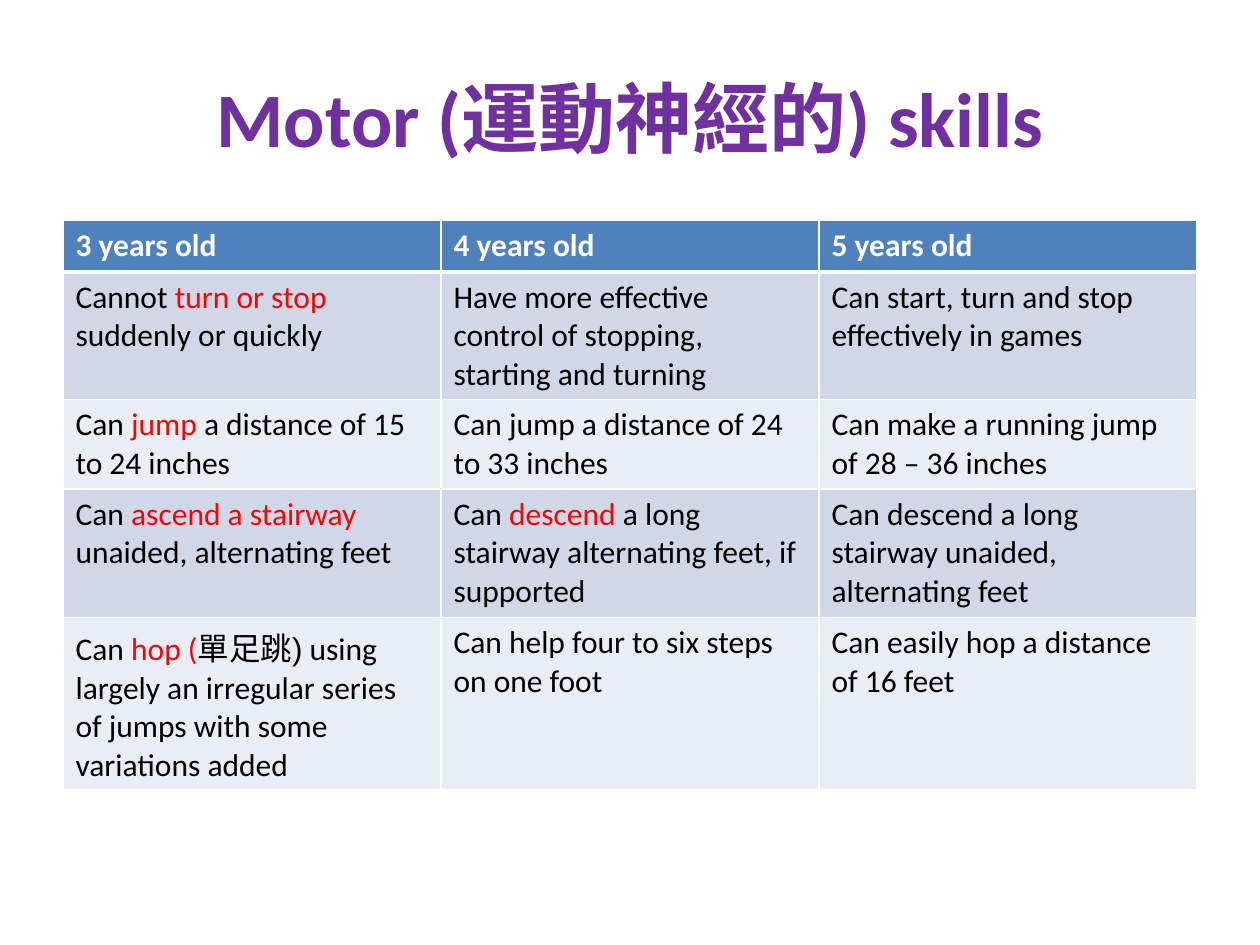
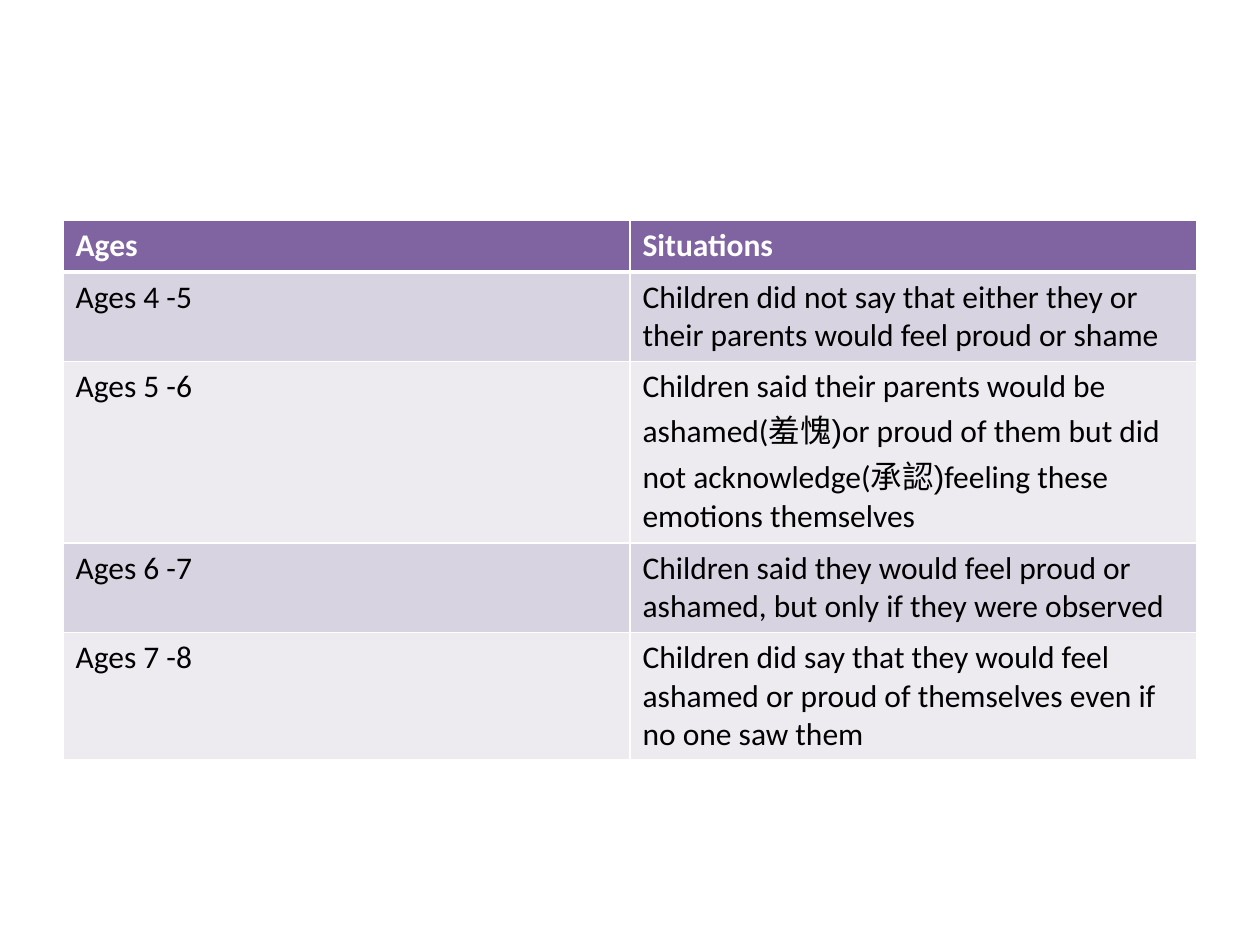
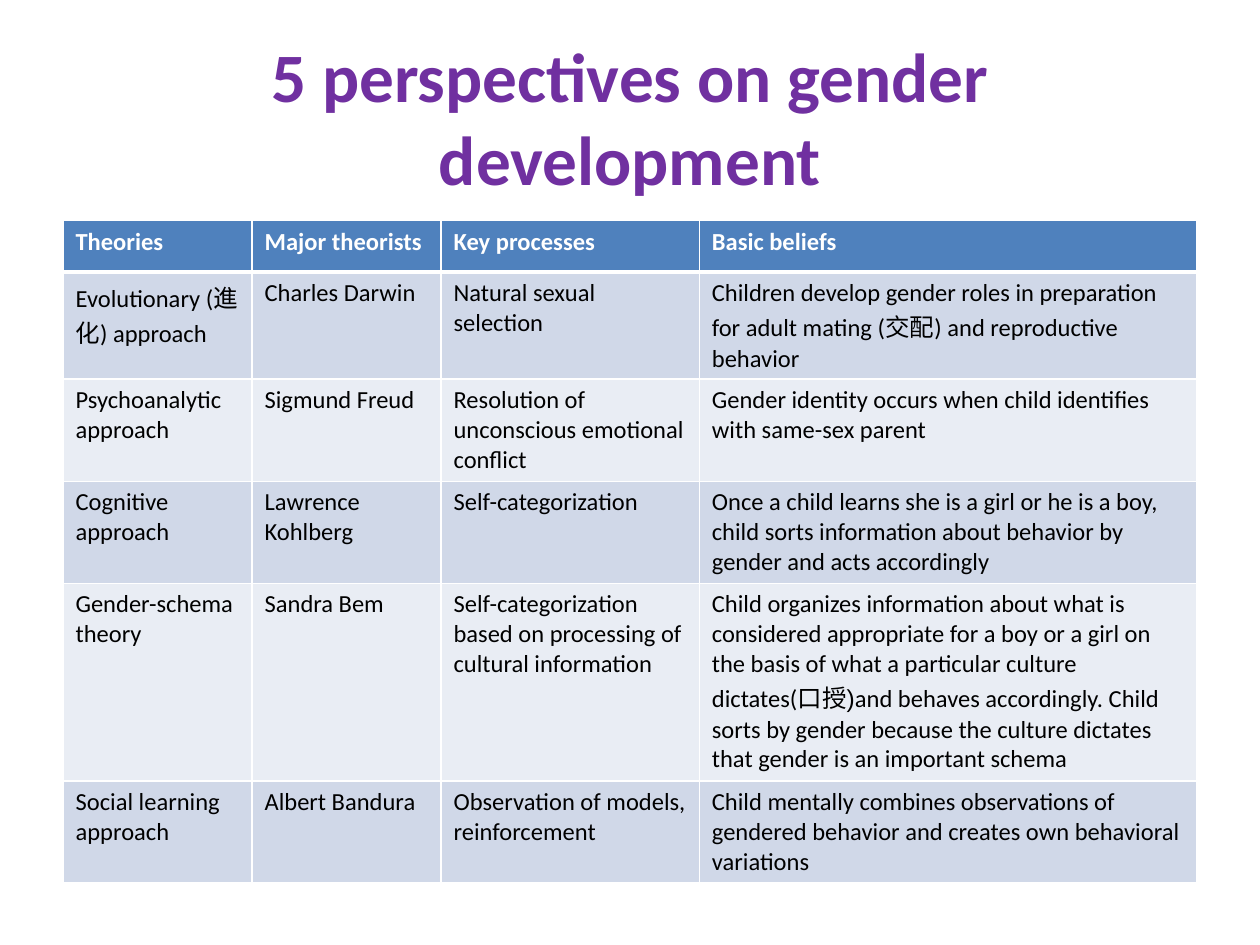
import lxml.etree
import pptx
import pptx.dml.color
import pptx.enum.text
import pptx.oxml.ns
import pptx.util

COLOURS = {
    "title": "7030A0",
    "header_text": "FFFFFF",
    "body_text": "000000",
    "highlight": "FF0000",
    "rule": "FFFFFF",
}
BLUE = {"header": "4F81BD", "bands": ("D0D8E8", "E9EDF4")}
PURPLE = {"header": "8064A2", "bands": ("D8D3E0", "EDEAF0")}

LATIN_FONT = "Calibri"
GLOSS_FONT = "Arial"
SLIDE_WIDTH = pptx.util.Inches(10)
SLIDE_HEIGHT = pptx.util.Inches(7.5)
MARGIN = int(SLIDE_WIDTH * 0.05)
CONTENT_WIDTH = SLIDE_WIDTH - 2 * MARGIN
TITLE_TOP = int(SLIDE_HEIGHT * 0.04)
TITLE_HEIGHT = pptx.util.Inches(1.25)
TABLE_TOP = pptx.util.Inches(1.75)
THIN_RULE = 1
HEADER_RULE = 3

MOTOR_SKILLS = [
    ["3 years old", "4 years old", "5 years old"],
    [
        ["Cannot ", ("turn or stop", "highlight"), " suddenly or quickly"],
        "Have more effective control of stopping, starting and turning",
        "Can start, turn and stop effectively in games",
    ],
    [
        ["Can ", ("jump", "highlight"), " a distance of 15 to 24 inches"],
        "Can jump a distance of 24 to 33 inches",
        "Can make a running jump of 28 – 36 inches",
    ],
    [
        ["Can ", ("ascend a stairway", "highlight"), " unaided, alternating feet"],
        ["Can ", ("descend", "highlight"), " a long stairway alternating feet, if supported"],
        "Can descend a long stairway unaided, alternating feet",
    ],
    [
        ["Can ", ("hop (", "highlight"), ("單足跳)", "gloss"),
         " using largely an irregular series of jumps with some variations added"],
        "Can help four to six steps on one foot",
        "Can easily hop a distance of 16 feet",
    ],
]
MOTOR_HEIGHTS = (0.41, 1.01, 0.71, 1.02, 1.37)

PRIDE_AND_SHAME = [
    ["Ages", "Situations"],
    ["Ages 4 -5",
     "Children did not say that either they or their parents would feel proud or shame"],
    ["Ages 5 -6",
     ["Children said their parents would be ashamed(", ("羞愧)", "gloss"),
      "or proud of them but did not acknowledge(", ("承認)", "gloss"),
      "feeling these emotions themselves"]],
    ["Ages 6 -7",
     "Children said they would feel proud or ashamed, but only if they were observed"],
    ["Ages 7 -8",
     "Children did say that they would feel ashamed or proud of themselves "
     "even if no one saw them"],
]
PRIDE_HEIGHTS = (0.41, 0.71, 1.44, 0.71, 1.01)

GENDER_THEORIES = [
    ["Theories", "Major theorists", "Key processes", "Basic beliefs"],
    ["Evolutionary (進化) approach", "Charles Darwin", "Natural sexual selection",
     "Children develop gender roles in preparation for adult mating (交配) "
     "and reproductive behavior"],
    ["Psychoanalytic approach", "Sigmund Freud",
     "Resolution of unconscious emotional conflict",
     "Gender identity occurs when child identifies with same-sex parent"],
    ["Cognitive approach", "Lawrence Kohlberg", "Self-categorization",
     "Once a child learns she is a girl or he is a boy, child sorts information "
     "about behavior by gender and acts accordingly"],
    ["Gender-schema theory", "Sandra Bem",
     "Self-categorization based on processing of cultural information",
     ["Child organizes information about what is considered appropriate for a boy "
      "or a girl on the basis of what a particular culture dictates(",
      ("口授)", "gloss"),
      "and behaves accordingly. Child sorts by gender because the culture dictates "
      "that gender is an important schema"]],
    ["Social learning approach", "Albert Bandura", "Observation of models, reinforcement",
     "Child mentally combines observations of gendered behavior and creates own "
     "behavioral variations"],
]
GENDER_HEIGHTS = (0.41, 0.85, 0.81, 0.81, 1.57, 0.81)


def rgb(hex_value):
    return pptx.dml.color.RGBColor.from_string(hex_value)


def set_font(font, size, colour, bold):
    font.name = LATIN_FONT
    font.size = pptx.util.Pt(size)
    font.bold = bold
    font.color.rgb = rgb(COLOURS[colour])


def add_title(slide, wording, size):
    title = slide.shapes.add_textbox(MARGIN, TITLE_TOP, CONTENT_WIDTH, TITLE_HEIGHT)
    frame = title.text_frame
    frame.word_wrap = True
    frame.vertical_anchor = pptx.enum.text.MSO_ANCHOR.MIDDLE
    heading = frame.paragraphs[0]
    heading.text = wording
    heading.alignment = pptx.enum.text.PP_ALIGN.CENTER
    set_font(heading.font, size, "title", True)


def add_rules(cell, top, bottom):
    qn = pptx.oxml.ns.qn
    properties = cell._tc.get_or_add_tcPr()
    widths = {"a:lnL": THIN_RULE, "a:lnR": THIN_RULE, "a:lnT": top, "a:lnB": bottom}
    for position, (side, width) in enumerate(widths.items()):
        rule = lxml.etree.Element(qn(side), w=str(pptx.util.Pt(width)))
        paint = lxml.etree.SubElement(rule, qn("a:solidFill"))
        lxml.etree.SubElement(paint, qn("a:srgbClr"), val=COLOURS["rule"])
        properties.insert(position, rule)


def write_cell(cell, content, fill, size, is_header):
    cell.fill.solid()
    cell.fill.fore_color.rgb = rgb(fill)
    paragraph = cell.text_frame.paragraphs[0]
    set_font(paragraph.font, size, "header_text" if is_header else "body_text", is_header)
    for part in [content] if isinstance(content, str) else content:
        wording, role = (part, None) if isinstance(part, str) else part
        run = paragraph.add_run()
        run.text = wording
        if role == "highlight":
            run.font.color.rgb = rgb(COLOURS["highlight"])
        elif role == "gloss":
            run.font.name = GLOSS_FONT


def add_banded_table(slide, rows, heights, shares, palette, size):
    table = slide.shapes.add_table(
        len(rows), len(shares), MARGIN, TABLE_TOP,
        CONTENT_WIDTH, pptx.util.Inches(sum(heights)),
    ).table
    for column, share in zip(table.columns, shares):
        column.width = int(CONTENT_WIDTH * share / sum(shares))
    for row_index, (contents, height) in enumerate(zip(rows, heights)):
        table.rows[row_index].height = pptx.util.Inches(height)
        is_header = row_index == 0
        fill = palette["header"] if is_header else palette["bands"][(row_index - 1) % 2]
        top = HEADER_RULE if row_index == 1 else THIN_RULE
        bottom = HEADER_RULE if is_header else THIN_RULE
        for column_index, content in enumerate(contents):
            cell = table.cell(row_index, column_index)
            write_cell(cell, content, fill, size, is_header)
            add_rules(cell, top, bottom)


def main():
    deck = pptx.Presentation()
    deck.slide_width = SLIDE_WIDTH
    deck.slide_height = SLIDE_HEIGHT
    blank = deck.slide_layouts[6]

    motor = deck.slides.add_slide(blank)
    add_title(motor, "Motor (運動神經的) skills", 44)
    add_banded_table(motor, MOTOR_SKILLS, MOTOR_HEIGHTS, (1, 1, 1), BLUE, 18)

    emotions = deck.slides.add_slide(blank)
    add_banded_table(emotions, PRIDE_AND_SHAME, PRIDE_HEIGHTS, (1, 1), PURPLE, 18)

    gender = deck.slides.add_slide(blank)
    add_title(gender, "5 perspectives on gender development", 39.6)
    add_banded_table(
        gender, GENDER_THEORIES, GENDER_HEIGHTS, (1.5, 1.5, 2.05, 3.95), BLUE, 14
    )

    deck.save("out.pptx")


if __name__ == "__main__":
    main()
